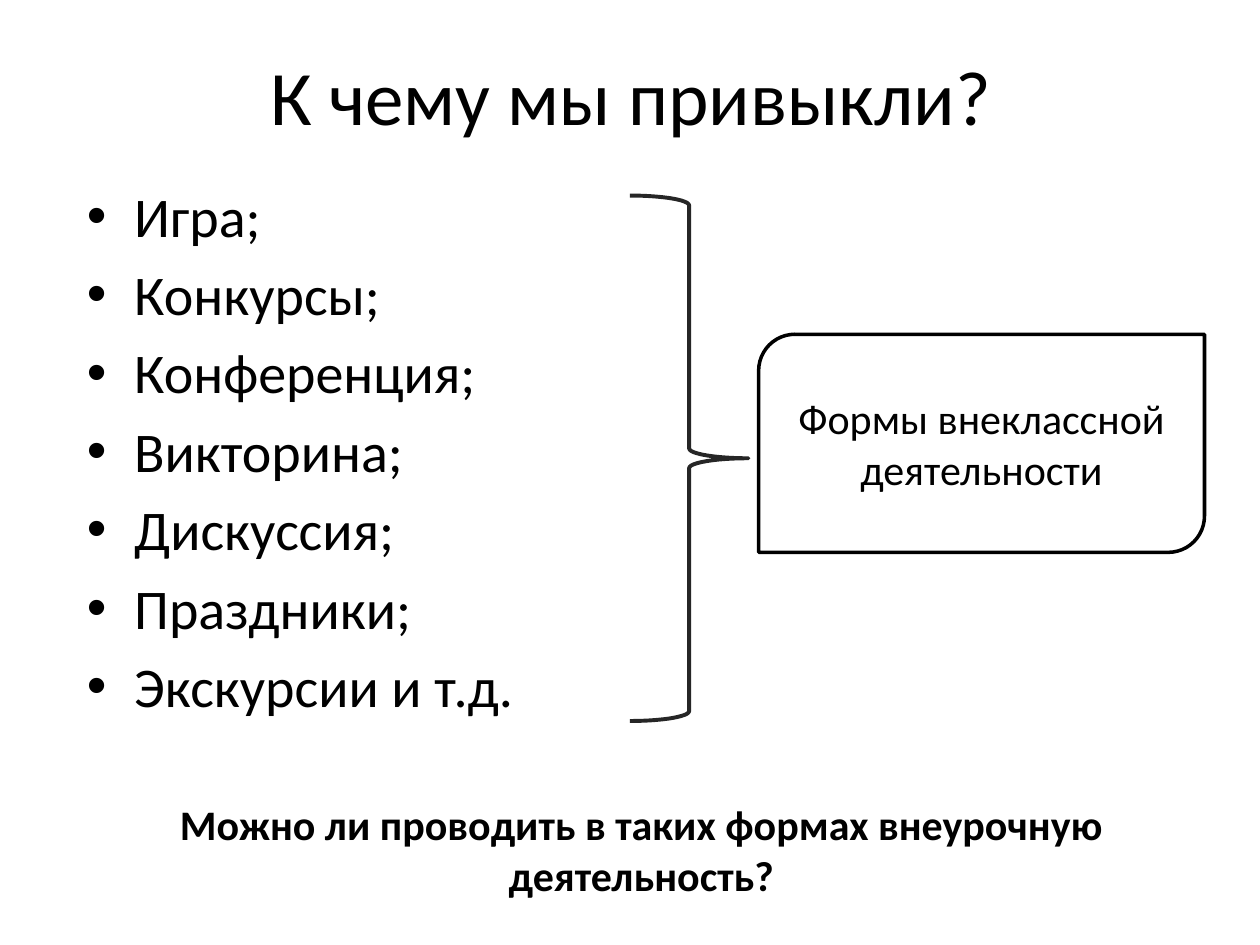
from dataclasses import dataclass

from pptx import Presentation
from pptx.dml.color import RGBColor
from pptx.enum.shapes import MSO_SHAPE
from pptx.enum.text import MSO_ANCHOR, PP_ALIGN
from pptx.util import Inches, Pt

BRACE = MSO_SHAPE.RIGHT_BRACE
CARD = MSO_SHAPE.ROUND_2_DIAG_RECTANGLE
CENTER = PP_ALIGN.CENTER
LEFT = PP_ALIGN.LEFT
TOP = MSO_ANCHOR.TOP
MIDDLE = MSO_ANCHOR.MIDDLE
TITLE_AND_CONTENT = 1
WIDTH, HEIGHT = Inches(10), Inches(7.5)


@dataclass(frozen=True)
class Theme:
    """Colours, type sizes and line widths of the slide."""

    font: str = "Calibri"
    ink: RGBColor = RGBColor(0, 0, 0)
    paper: RGBColor = RGBColor(255, 255, 255)
    brace: RGBColor = RGBColor(0x26, 0x26, 0x26)
    title: Pt = Pt(44)
    body: Pt = Pt(32)
    label: Pt = Pt(24)
    brace_line: Pt = Pt(2.25)
    card_line: Pt = Pt(2)


THEME = Theme()
FORMS = ["Игра;", "Конкурсы;", "Конференция;", "Викторина;",
         "Дискуссия;", "Праздники;", "Экскурсии и т.д."]


def share(left, top, width, height):
    """Turn shares of the slide's size into a box."""
    return (int(left * WIDTH), int(top * HEIGHT),
            int(width * WIDTH), int(height * HEIGHT))


def inside(box, left, top, width, height):
    """Take a part of a box by shares of that box."""
    x, y, w, h = box
    return int(x + left * w), int(y + top * h), int(width * w), int(height * h)


def place(shape, box):
    """Move a shape into a box."""
    for name, value in zip(("left", "top", "width", "height"), box):
        setattr(shape, name, value)


def write(shape, lines, size, align=CENTER, anchor=MIDDLE, bold=False):
    """Write and format the paragraphs of a shape."""
    frame = shape.text_frame
    frame.word_wrap = True
    frame.vertical_anchor = anchor
    frame.text = "\n".join(lines)
    font_format = {"name": THEME.font, "size": size, "bold": bold}
    for para in frame.paragraphs:
        para.alignment = align
        for span in para.runs:
            for name, value in font_format.items():
                setattr(span.font, name, value)
            span.font.color.rgb = THEME.ink
    frame.paragraphs[0].space_before = Pt(0)


def outline(shape, color, width):
    """Give a shape a plain line and no shadow."""
    shape.shadow.inherit = False
    shape.line.color.rgb = color
    shape.line.width = width


def add_heading(page, box):
    """Fill the title placeholder."""
    place(page.shapes.title, box)
    write(page.shapes.title, ["К чему мы привыкли?"], THEME.title)


def add_forms(page, box):
    """Fill the body placeholder with the list of forms."""
    body = page.placeholders[1]
    place(body, box)
    write(body, FORMS, THEME.body, LEFT, TOP)


def add_summary(page, box):
    """Draw the brace and the card that sums up the list."""
    brace = page.shapes.add_shape(BRACE, *inside(box, 0, 0, 0.206, 1))
    brace.fill.background()
    outline(brace, THEME.brace, THEME.brace_line)
    card = page.shapes.add_shape(CARD, *inside(box, 0.224, 0.264, 0.776, 0.415))
    card.fill.solid()
    card.fill.fore_color.rgb = THEME.paper
    outline(card, THEME.ink, THEME.card_line)
    write(card, ["Формы внеклассной деятельности"], THEME.label)


def add_question(page, box):
    """Write the closing question."""
    question = page.shapes.add_textbox(*box)
    write(question, ["Можно ли проводить в таких формах внеурочную деятельность?"],
          THEME.label, bold=True)


def main():
    """Build the deck and save it."""
    deck = Presentation()
    deck.slide_width, deck.slide_height = WIDTH, HEIGHT
    page = deck.slides.add_slide(deck.slide_layouts[TITLE_AND_CONTENT])
    add_heading(page, share(0.051, 0.017, 0.9, 0.167))
    add_forms(page, share(0.059, 0.185, 0.9, 0.599))
    add_question(page, share(0.059, 0.836, 0.9, 0.125))
    add_summary(page, share(0.5, 0.207, 0.456, 0.556))
    deck.save("out.pptx")


if __name__ == "__main__":
    main()
